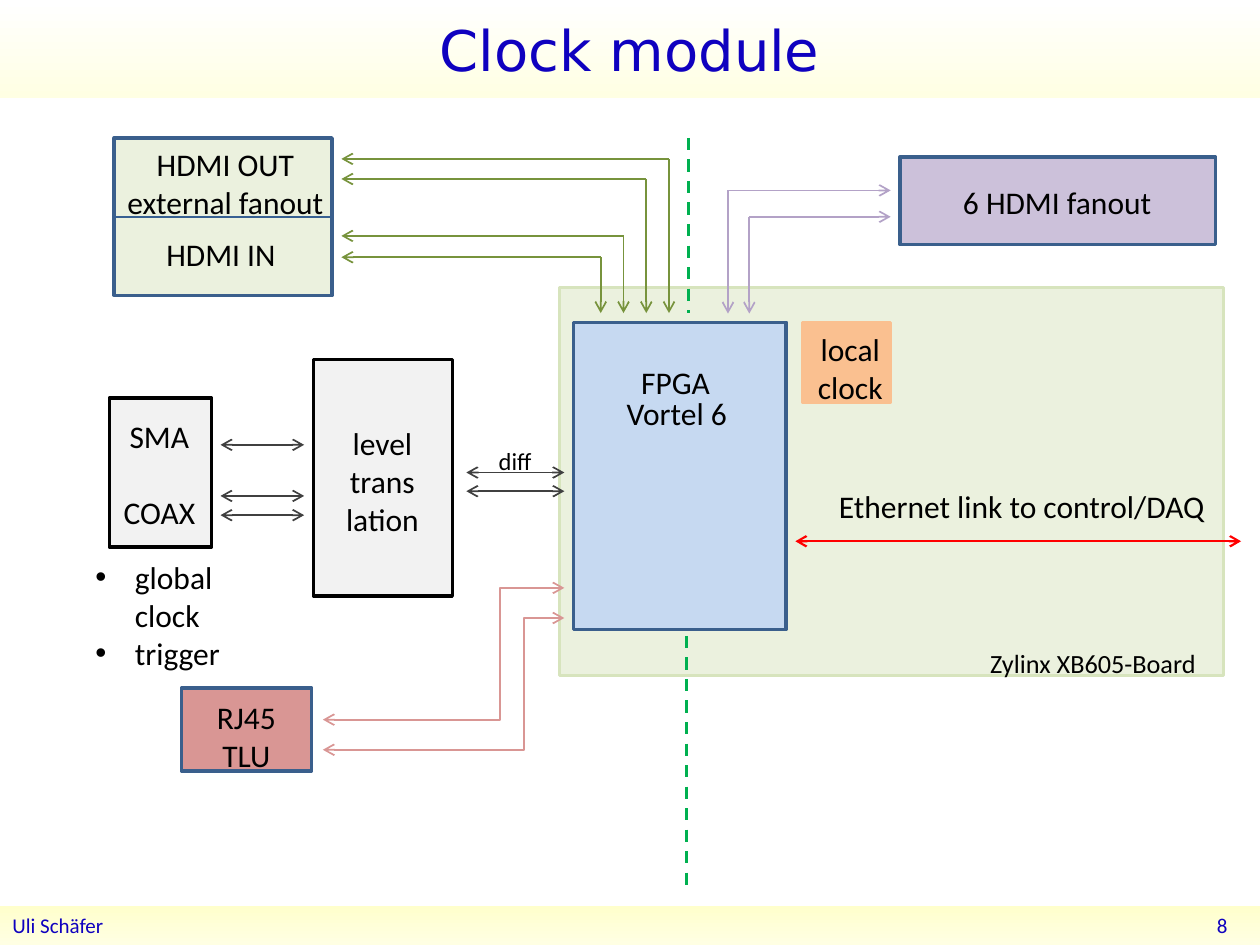
from pptx import Presentation
from pptx.util import Pt
from pptx.dml.color import RGBColor
from pptx.enum.dml import MSO_LINE as Dash
from pptx.enum.shapes import MSO_SHAPE as Shape, MSO_CONNECTOR as Link
from pptx.enum.text import PP_ALIGN as Align, MSO_ANCHOR as Anchor
from pptx.oxml.ns import qn
from lxml.etree import SubElement as sub

BLACK, INK, EDGE = "000000", "0F01BF", "3A5F8C"
GREY, GREEN, PURPLE, ROSE = "404040", "77933C", "B3A2C7", "D99694"


def paint(code):
    return RGBColor.from_string(code)


def apply(item, values):
    for key, value in values.items():
        setattr(item, key, value)


class Page:
    font = "Calibri"
    edge = 2

    def __init__(self, slide):
        self.shapes = slide.shapes

    def rect(self, x, y, w, h):
        shape = self.shapes.add_shape(Shape.RECTANGLE, Pt(x), Pt(y), Pt(w), Pt(h))
        shape.shadow.inherit = False
        return shape

    def box(self, x, y, w, h, fill, line):
        shape = self.rect(x, y, w, h)
        shape.fill.solid()
        shape.fill.fore_color.rgb = paint(fill)
        shape.line.color.rgb = paint(line)
        shape.line.width = Pt(self.edge)
        return shape

    def band(self, x, y, w, h, low, high):
        shape = self.rect(x, y, w, h)
        shape.line.fill.background()
        shape.fill.gradient()
        shape.fill.gradient_angle = 90
        for stop, code in zip(shape.fill.gradient_stops, (low, high)):
            stop.color.rgb = paint(code)
        return shape

    def words(self, shape, lines, size=18, color=BLACK, font=None,
              align=Align.CENTER, anchor=Anchor.TOP, gap=0):
        frame = shape.text_frame
        apply(frame, {"word_wrap": True, "vertical_anchor": anchor})
        frame.text = "\n".join(lines)
        for i, para in enumerate(frame.paragraphs):
            apply(para, {"alignment": align, "space_before": Pt(gap if i else 0)})
            for run in para.runs:
                apply(run.font, {"name": font or self.font, "size": Pt(size)})
                run.font.color.rgb = paint(color)
        return frame

    def label(self, x, y, w, h, *lines, **style):
        shape = self.shapes.add_textbox(Pt(x), Pt(y), Pt(w), Pt(h))
        return self.words(shape, lines, **style)

    def bullets(self, x, y, w, h, *lines):
        frame = self.label(x, y, w, h, *lines, align=Align.LEFT)
        for para in frame.paragraphs:
            props = para._p.get_or_add_pPr()
            props.set("marL", str(Pt(22.5)))
            props.set("indent", str(-Pt(22.5)))
            sub(props, qn("a:buFont"), typeface="Arial")
            sub(props, qn("a:buChar"), char="•")

    def line(self, start, end, color, width=1, ends="", dash=None, bend=None):
        kind = Link.ELBOW if bend else Link.STRAIGHT
        link = self.shapes.add_connector(kind, *map(Pt, start + end))
        link.line.color.rgb = paint(color)
        apply(link.line, {"width": Pt(width), "dash_style": dash})
        for tip in ends.split():
            sub(link.get_or_add_ln(), qn("a:" + tip), type="arrow")
        props = link.element.spPr
        sub(props, qn("a:effectLst"))
        if bend:
            guides = props.find(qn("a:prstGeom")).get_or_add_avLst()
            share = (bend - start[0]) / (end[0] - start[0])
            sub(guides, qn("a:gd"), name="adj1", fmla=f"val {round(share * 100000)}")
        return link

    def corner(self, x, y, side, foot, color):
        for end in ((side, y), (x, foot)):
            self.line((x, y), end, color, ends="tailEnd")


def main():
    deck = Presentation()
    apply(deck, {"slide_width": Pt(720), "slide_height": Pt(540)})
    page = Page(deck.slides.add_slide(deck.slide_layouts[6]))
    both = "headEnd tailEnd"

    top = page.band(0, 0, 720, 56.2, "FFFFE3", "FFFFFF")
    page.words(top, ["Clock module"], size=32, color=INK, font="DejaVu Sans",
               anchor=Anchor.MIDDLE)
    foot = page.band(0, 517.5, 720, 22.5, "FFFFE3", "FFFFCC")
    note = {"size": 12, "color": INK, "anchor": Anchor.MIDDLE}
    page.words(foot, ["Uli Schäfer"], align=Align.LEFT, **note)
    page.label(556.5, 517, 152, 23, "8", align=Align.RIGHT, **note)

    page.box(319.7, 164.2, 379.4, 221.8, "EBF1DE", "D7E4BD")
    page.box(327.6, 184.2, 121.7, 175.5, "C6D9F1", EDGE)
    page.label(359.3, 203.8, 69, 26, "FPGA", align=Align.LEFT)
    page.label(333.4, 221.8, 106.6, 26, "Vortel 6")
    for x, y, low in ((393.6, 78.8, 179), (392.3, 363.4, 509.8)):
        page.line((x, y), (x, low), "00B050", 1.75, dash=Dash.DASH)

    page.label(468.7, 275, 230.4, 29, "Ethernet link to control/DAQ")
    page.line((454.5, 309.3), (709.2, 309.3), "FF0000", 1.25, both)

    page.box(179.2, 205.4, 79.3, 135.2, "F2F2F2", BLACK)
    page.label(173.5, 239, 90, 73, "level", "trans\vlation")
    page.box(62.5, 227.5, 58.4, 85, "F2F2F2", BLACK)
    page.label(61.9, 234.7, 58.3, 73, "SMA", "COAX", gap=22)
    for y in (254.2, 283.4, 294.4):
        page.line((126, y), (173.8, y), GREY, ends=both)
    for y in (270, 280.7):
        page.line((266.5, y), (322.5, y), GREY, ends=both)

    page.box(103.7, 393.1, 74.4, 47.5, ROSE, EDGE)
    page.label(111.6, 395.3, 58.3, 44.6, "RJ45", "TLU")
    for y, bend in ((428.5, 299.5), (411.3, 285.7)):
        page.line((184.5, y), (322.5, y - 75.3), ROSE, ends=both, bend=bend)

    page.box(514.2, 89.7, 180.4, 50.1, "CCC1DA", EDGE)
    page.label(522, 100.8, 164.2, 26, "6 HDMI fanout")
    for x, y in ((428.2, 123.9), (416, 108.8)):
        page.corner(x, y, 509, 179.2, PURPLE)

    ports = page.box(65.3, 78.8, 124.5, 90, "EBF1DE", EDGE)
    page.label(62.6, 79.2, 132.5, 51, "HDMI OUT", "external fanout")
    split = page.line((65.3, 123.8), (189.8, 123.8), "376092", 1.25)
    split.begin_connect(ports, 1)
    split.end_connect(ports, 3)
    page.label(62.6, 131, 127.4, 26, "HDMI IN")
    for i, y in enumerate((90.8, 102.3, 134.8, 147)):
        page.corner(382.3 - 13 * i, y, 195.1, 178.9, GREEN)

    page.label(558.7, 366.5, 140.4, 44, "Zylinx XB605-Board", size=15, align=Align.LEFT)
    page.bullets(47.5, 315.4, 93.6, 73, "global clock", "trigger")
    page.label(277.9, 251.3, 44.6, 21.6, "diff", size=14, align=Align.LEFT)
    page.box(458.6, 184.3, 50.4, 45.4, "FAC090", "FAC090")
    page.label(451.4, 185, 69, 44.6, "local clock")
    deck.save("out.pptx")


if __name__ == "__main__":
    main()
